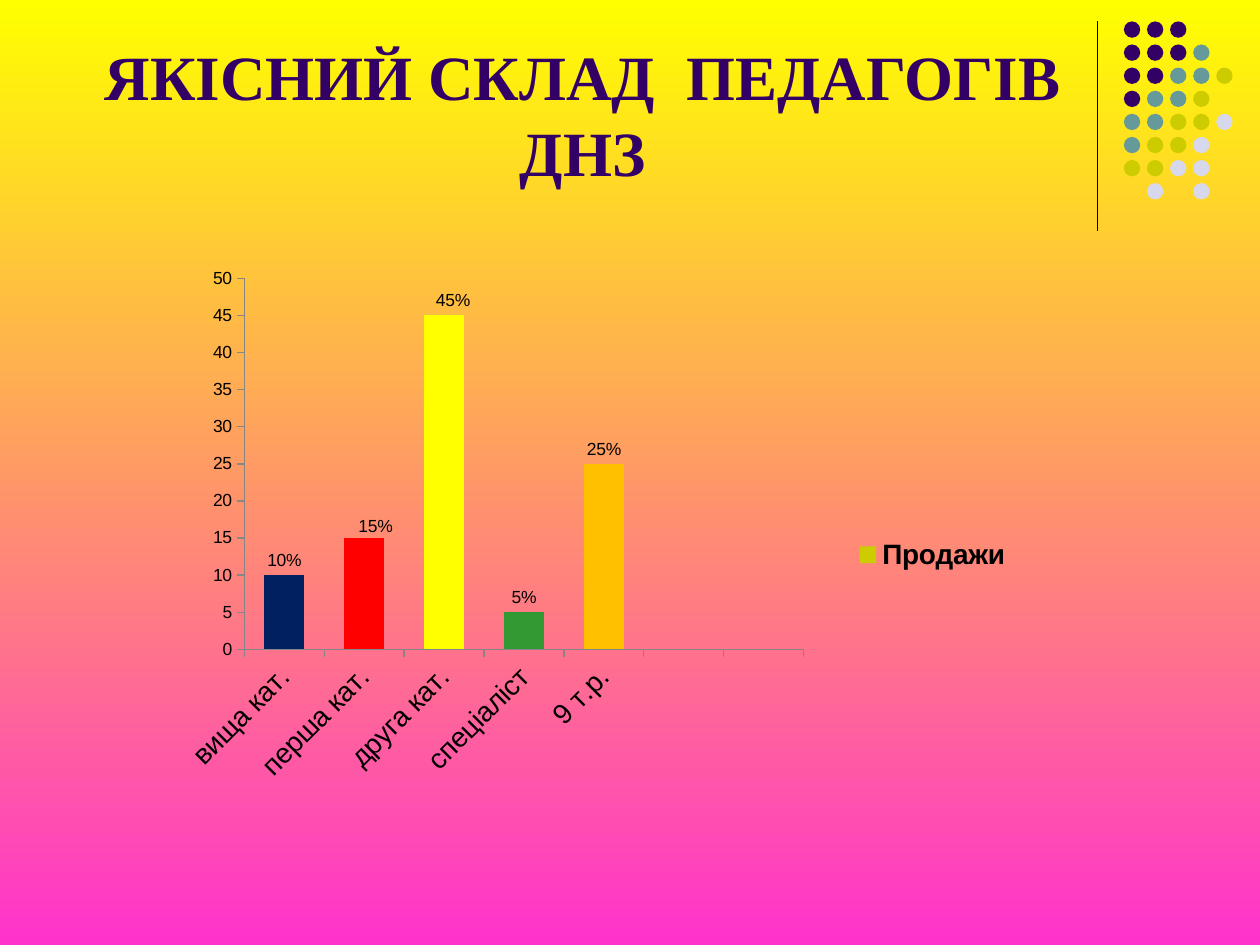
from lxml.etree import SubElement
from pptx import Presentation
from pptx.chart.data import CategoryChartData
from pptx.dml.color import RGBColor
from pptx.enum.chart import XL_CHART_TYPE, XL_LABEL_POSITION, XL_LEGEND_POSITION, XL_TICK_MARK
from pptx.enum.shapes import MSO_CONNECTOR, MSO_SHAPE
from pptx.enum.text import MSO_ANCHOR, PP_ALIGN
from pptx.oxml.ns import qn
from pptx.util import Inches, Pt


def color(hex_code):
    return RGBColor.from_string(hex_code)


def write(frame, text, size=10, font="Arial", ink="000000", bold=False):
    """Put one centred, formatted paragraph into a text frame."""
    paragraph = frame.paragraphs[0]
    paragraph.alignment = PP_ALIGN.CENTER
    run = paragraph.add_run()
    run.text = text
    run.font.size, run.font.name, run.font.bold = Pt(size), font, bold
    run.font.color.rgb = color(ink)


def place(part, index, **settings):
    """Give a chart part a manual layout, as its child number index."""
    for automatic in part.findall(qn("c:layout")):
        part.remove(automatic)
    layout = SubElement(part, qn("c:layout"))
    part.insert(index, layout)
    manual = SubElement(layout, qn("c:manualLayout"))
    for name, value in settings.items():
        SubElement(manual, qn(f"c:{name}")).set("val", str(value))


prs = Presentation()
prs.slide_width, prs.slide_height = Inches(10), Inches(7.5)
slide = prs.slides.add_slide(prs.slide_layouts[5])

# Background: yellow at the top to pink at the bottom
backdrop = slide.background.fill
backdrop.gradient()
backdrop.gradient_angle = 270
for stop, position, hex_code in zip(backdrop.gradient_stops, (0, 1), ("FFFF00", "FF33CC")):
    stop.position = position
    stop.color.rgb = color(hex_code)

# Corner ornament: a rule and a grid of dots
rule = slide.shapes.add_connector(
    MSO_CONNECTOR.STRAIGHT, Inches(8.71), Inches(0.17), Inches(8.71), Inches(1.83))
rule.line.color.rgb = color("000000")
rule.line.width = Pt(0.75)
SubElement(rule._element.spPr, qn("a:effectLst"))

DOT_COLORS = {"P": "330066", "T": "669999", "O": "CCCC00", "L": "D8D8EC"}
DOT_ROWS = ["PPP", "PPPT", "PPTTO", "PTTO", "TTOOL", "TOOL", "OOLL", ".L.L"]
DOT, PITCH = Inches(0.13), Inches(0.55 / 3)
ornament = slide.shapes.add_group_shape()
for row, letters in enumerate(DOT_ROWS):
    for column, letter in enumerate(letters):
        if letter == ".":
            continue
        dot = ornament.shapes.add_shape(
            MSO_SHAPE.OVAL, Inches(8.92) + column * PITCH, Inches(0.17) + row * PITCH, DOT, DOT)
        dot.shadow.inherit = False
        dot.fill.solid()
        dot.fill.fore_color.rgb = color(DOT_COLORS[letter])
        dot.line.fill.background()

# Title
title = slide.shapes.title
title.left, title.top, title.width, title.height = map(Inches, (0.5, 0.13, 8.25, 1.42))
title.text_frame.word_wrap = True
title.text_frame.vertical_anchor = MSO_ANCHOR.BOTTOM
write(title.text_frame, "ЯКІСНИЙ СКЛАД  ПЕДАГОГІВ ДНЗ", size=36,
      font="Times New Roman", ink="330066", bold=True)

# Staff chart; the last two categories are empty
STAFF = [
    ("вища кат.", 10, "002060"),
    ("перша кат.", 15, "FF0000"),
    ("друга кат.", 45, "FFFF00"),
    ("спеціаліст", 5, "339933"),
    ("9 т.р.", 25, "FFC000"),
]
CHART_WIDTH, CHART_HEIGHT = 6.84, 4.53
staff_data = CategoryChartData()
staff_data.categories = [category for category, _, _ in STAFF] + ["", ""]
staff_data.add_series("Продажи", [share for _, share, _ in STAFF] + [None, None])
chart = slide.shapes.add_chart(
    XL_CHART_TYPE.COLUMN_CLUSTERED,
    *map(Inches, (1.48, 2.11, CHART_WIDTH, CHART_HEIGHT)), staff_data).chart
chart.has_title = False
chart.font.size, chart.font.name = Pt(10), "Arial"
chart.font.color.rgb = color("000000")

plot = chart.plots[0]
plot.gap_width = 100
plot.vary_by_categories = False
shares = plot.series[0]
shares.format.fill.solid()
shares.format.fill.fore_color.rgb = color("CCCC00")
for index, (_, share, hex_code) in enumerate(STAFF):
    point = shares.points[index]
    point.format.fill.solid()
    point.format.fill.fore_color.rgb = color(hex_code)
    write(point.data_label.text_frame, f"{share}%")
    point.data_label.position = XL_LABEL_POSITION.OUTSIDE_END

# The second and third labels sit a little to the right of their bars
percent_labels = shares._element.findall(f"{qn('c:dLbls')}/{qn('c:dLbl')}")
for index, right, down in ((1, 0.09, 0.03), (2, 0.07, 0)):
    place(percent_labels[index], 1, x=right / CHART_WIDTH, y=down / CHART_HEIGHT)

for axis in (chart.category_axis, chart.value_axis):
    axis.has_major_gridlines = False
    axis.major_tick_mark = XL_TICK_MARK.OUTSIDE
    axis.format.line.color.rgb = color("868686")
    axis.format.line.width = Pt(0.75)
chart.value_axis.minimum_scale, chart.value_axis.maximum_scale = 0, 50
chart.value_axis.major_unit = 5
category_labels = chart.category_axis.tick_labels
category_labels.font.size = Pt(16)
chart.category_axis._element.find(qn("c:txPr")).find(qn("a:bodyPr")).set("rot", "-2700000")

chart.has_legend = True
chart.legend.position = XL_LEGEND_POSITION.RIGHT
chart.legend.include_in_layout = False
chart.legend.font.size, chart.legend.font.name, chart.legend.font.bold = Pt(16), "Arial", True

# Fixed plot area and legend, as shares of the chart's size
place(chart._chartSpace.chart.plotArea, 0, layoutTarget="inner", xMode="edge", yMode="edge",
      x=0.45 / CHART_WIDTH, y=0.1 / CHART_HEIGHT, w=0.65, h=0.65)
place(chart.legend._element, 1, xMode="edge", yMode="edge", x=0.77, y=0.47)

prs.save("out.pptx")
